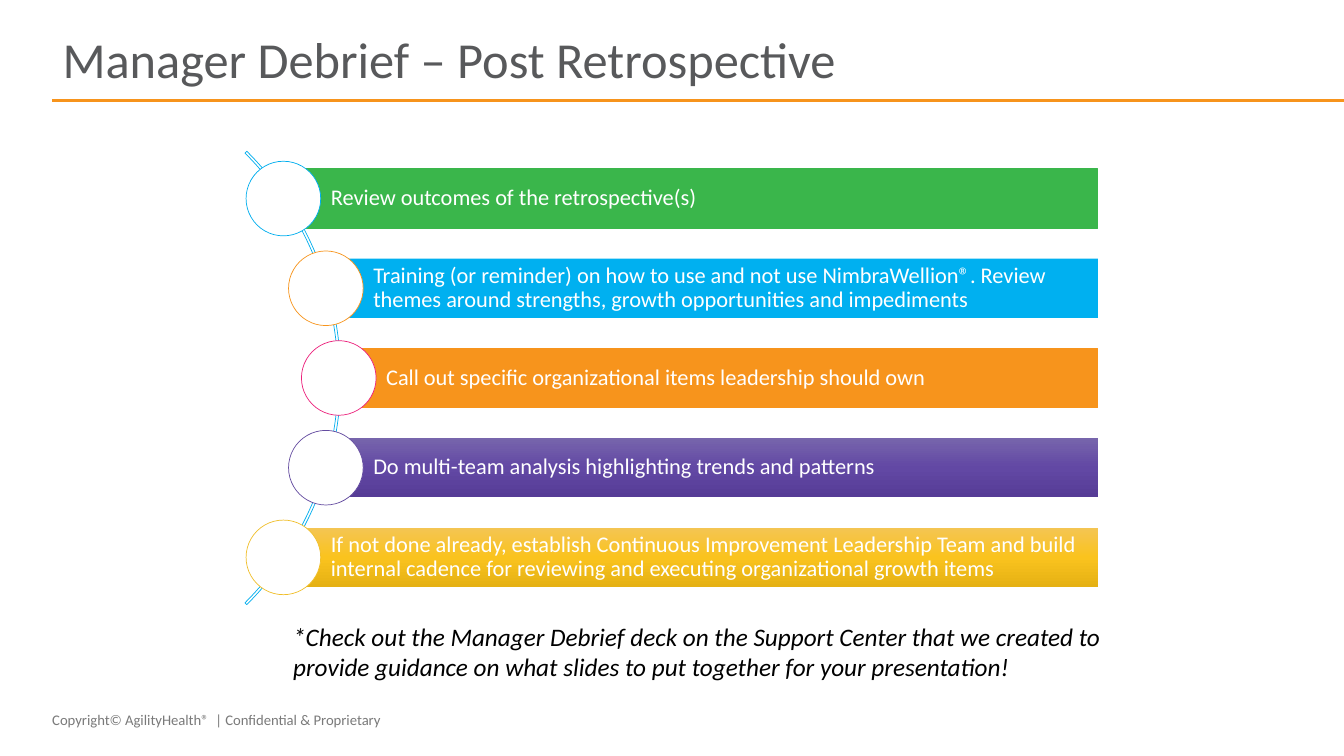
from copy import deepcopy
from math import sqrt

from lxml import etree
from pptx import Presentation
from pptx import util as u
from pptx.dml.color import RGBColor
from pptx.enum import shapes, text
from pptx.oxml.ns import qn

FONT = "Calibri"
WHITE = RGBColor(0xFF, 0xFF, 0xFF)
BLACK = RGBColor(0, 0, 0)
DARK_GRAY = RGBColor(0x58, 0x59, 0x5B)
GRAY = RGBColor(0x7A, 0x7A, 0x7A)
GREEN = RGBColor(0x3A, 0xB6, 0x4B)
CYAN = RGBColor(0x00, 0xAE, 0xEE)
BLUE = RGBColor(0x00, 0xB0, 0xF0)
ORANGE = RGBColor(0xF7, 0x94, 0x1C)
PINK = RGBColor(0xEC, 0x20, 0x7B)
PURPLE = RGBColor(0x64, 0x4C, 0xA0)
GOLD = RGBColor(0xF0, 0xBE, 0x28)
PURPLE_FADE = [RGBColor(0x77, 0x65, 0xAC), RGBColor(0x62, 0x48, 0xA4), RGBColor(0x56, 0x3C, 0x96)]
GOLD_FADE = [RGBColor(0xF4, 0xC5, 0x53), RGBColor(0xFA, 0xC3, 0x1E), RGBColor(0xE5, 0xB1, 0x14)]

# Bar text, bar fill, bar outline, circle outline
STEPS = [
    ("Review outcomes of the retrospective(s)", GREEN, GREEN, CYAN),
    ("Training (or reminder) on how to use and not use NimbraWellion®. Review themes "
     "around strengths, growth opportunities and impediments", BLUE, None, ORANGE),
    ("Call out specific organizational items leadership should own", ORANGE, ORANGE, PINK),
    ("Do multi-team analysis highlighting trends and patterns", PURPLE_FADE, None, PURPLE),
    ("If not done already, establish Continuous Improvement Leadership Team and build "
     "internal cadence for reviewing and executing organizational growth items",
     GOLD_FADE, None, GOLD),
]


def write(tf, words, size=16, color=WHITE, italic=False, spacing=None,
          anchor=text.MSO_ANCHOR.TOP, insets=(0.1, 0.05, 0.1, 0.05)):
    tf.word_wrap = True
    tf.vertical_anchor = anchor
    tf.margin_left, tf.margin_top, tf.margin_right, tf.margin_bottom = map(u.Inches, insets)
    p = tf.paragraphs[0]
    p.alignment = text.PP_ALIGN.LEFT
    if spacing:
        p.line_spacing = spacing
    r = p.add_run()
    r.text = words
    r.font.name, r.font.size, r.font.italic = FONT, u.Pt(size), italic
    r.font.color.rgb = color


class Deck:
    def __init__(self, prs):
        self.s = prs.slides.add_slide(prs.slide_layouts[5])

    def title(self, words, *box):
        sp = self.s.shapes.title
        sp.left, sp.top, sp.width, sp.height = map(u.Inches, box)
        write(sp.text_frame, words, size=36, color=DARK_GRAY, spacing=0.9,
              anchor=text.MSO_ANCHOR.MIDDLE)

    def label(self, words, *box, **style):
        sp = self.s.shapes.add_textbox(*map(u.Inches, box))
        write(sp.text_frame, words, **style)

    def rule(self, x1, y1, x2, y2, color, width):
        line = self.s.shapes.add_connector(
            shapes.MSO_CONNECTOR.STRAIGHT, *map(u.Inches, (x1, y1, x2, y2)))
        line.line.color.rgb, line.line.width = color, u.Pt(width)
        etree.SubElement(line._element.spPr, qn("a:effectLst"))

    def shape(self, kind, *box, fill=None, line=None, width=0.5):
        sp = self.s.shapes.add_shape(kind, *map(u.Inches, box))
        sp.shadow.inherit = False
        if fill is None:
            sp.fill.background()
        elif isinstance(fill, list):
            self.fade(sp, fill)
        else:
            sp.fill.solid()
            sp.fill.fore_color.rgb = fill
        if line is None:
            sp.line.fill.background()
        else:
            sp.line.color.rgb, sp.line.width = line, u.Pt(width)
        return sp

    def fade(self, sp, colors):
        """Three-stop gradient from top to bottom."""
        sp.fill.gradient()
        sp.fill.gradient_angle = 270
        stops = sp._element.spPr.find(qn("a:gradFill")).find(qn("a:gsLst"))
        stops.append(deepcopy(stops[-1]))
        for stop, position, color in zip(sp.fill.gradient_stops, (0, 0.5, 1), colors):
            stop.position = position
            stop.color.rgb = color


def main():
    prs = Presentation()
    prs.slide_width, prs.slide_height = u.Inches(13.33), u.Inches(7.5)
    deck = Deck(prs)

    # Footer, rule and title
    deck.label("Copyright© AgilityHealth®  | Confidential & Proprietary",
               0.42, 7, 4.5, 0.28, size=10.5, color=GRAY)
    deck.rule(0.52, 1, 13.33, 1, ORANGE, 2)
    deck.title("Manager Debrief – Post Retrospective", 0.52, 0.27, 12.29, 0.7)

    # Arc behind the steps
    center_x, center_y, size = 0.2, 3.75, 6.36
    arc = deck.shape(shapes.MSO_SHAPE.BLOCK_ARC, center_x - size / 2, center_y - size / 2,
                     size, size, line=CYAN)
    for i, value in enumerate((189, 27, 0.004)):
        arc.adjustments[i] = value

    # Steps: circles follow the arc, bars start at the circle centres
    radius, pitch, right, bar_h, dot = 3.16, 0.89, 10.89, 0.59, 0.74
    for i, (words, fill, line, ring) in enumerate(STEPS):
        dy = (i - 2) * pitch
        x, y = center_x + sqrt(radius ** 2 - dy ** 2), center_y + dy
        bar = deck.shape(shapes.MSO_SHAPE.RECTANGLE, x, y - bar_h / 2, right - x, bar_h,
                         fill=fill, line=line, width=0.75)
        write(bar.text_frame, words, spacing=0.9, anchor=text.MSO_ANCHOR.MIDDLE,
              insets=(0.47, 0.04, 0.04, 0.04))
        deck.shape(shapes.MSO_SHAPE.OVAL, x - dot / 2, y - dot / 2, dot, dot,
                   fill=WHITE, line=ring)

    # Closing note
    deck.label("*Check out the Manager Debrief deck on the Support Center that we created to "
               "provide guidance on what slides to put together for your presentation!",
               2.81, 6.11, 8.5, 0.71, size=18, color=BLACK, italic=True)

    prs.save("out.pptx")


if __name__ == "__main__":
    main()
